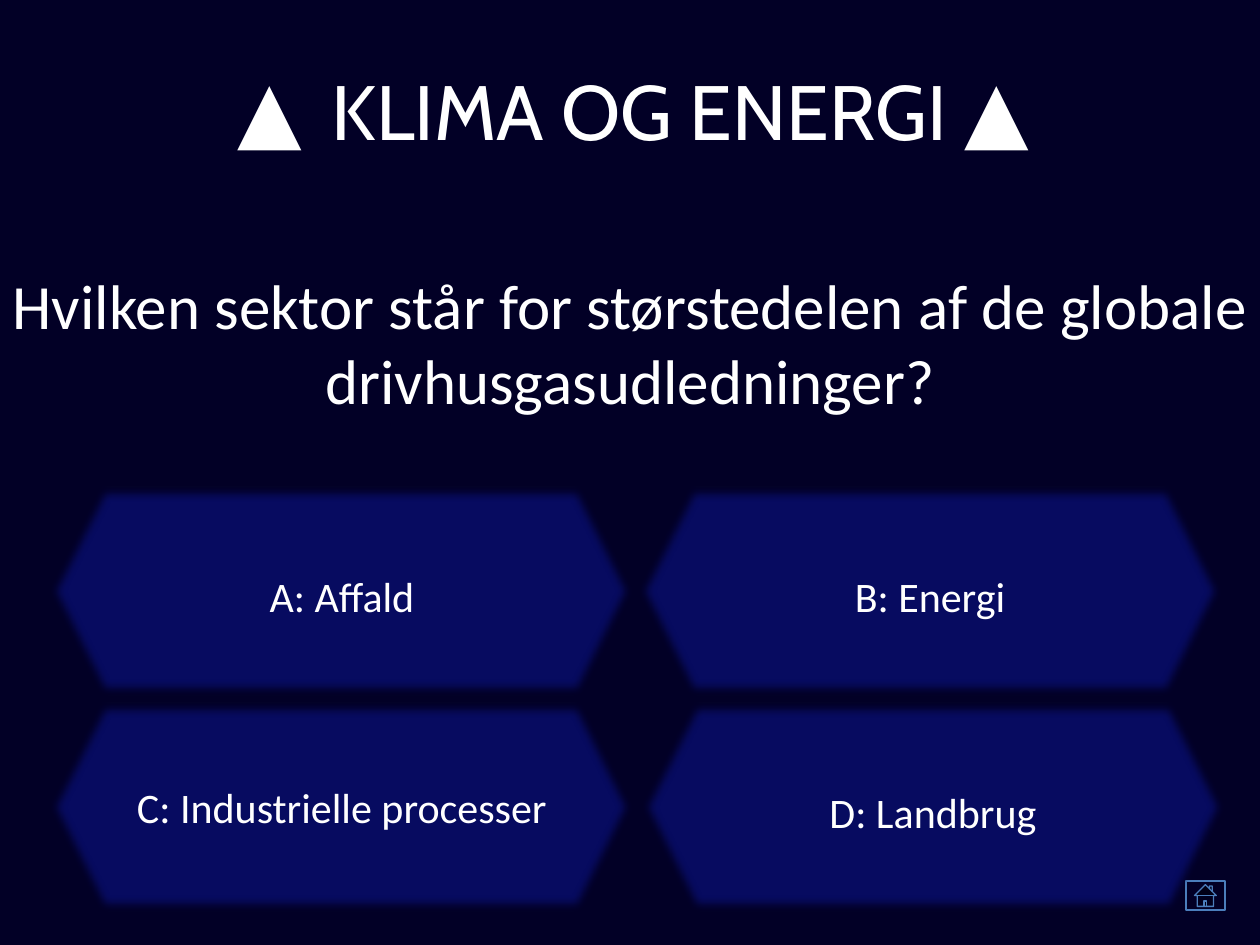
import lxml.etree
import pptx
import pptx.dml.color
import pptx.enum.shapes
import pptx.enum.text
import pptx.oxml.ns
import pptx.util

RGBColor = pptx.dml.color.RGBColor
Shapes = pptx.enum.shapes.MSO_SHAPE
Anchor = pptx.enum.text.MSO_ANCHOR

NIGHT = RGBColor(0x02, 0x00, 0x26)
ROYAL = RGBColor(0x07, 0x0B, 0x60)
STEEL = RGBColor(0x4B, 0x7E, 0xBC)
WHITE = RGBColor(0xFF, 0xFF, 0xFF)

EMU_PER_PX = 914400 / 126
SOFT_EDGE_PX = 9


def px(length):
    return pptx.util.Emu(round(length * EMU_PER_PX))


class QuizSlide:
    def __init__(self, presentation, background):
        self.slide = presentation.slides.add_slide(presentation.slide_layouts[6])
        self.slide.background.fill.solid()
        self.slide.background.fill.fore_color.rgb = background

    def outlined(self, kind, box, color):
        shape = self.slide.shapes.add_shape(kind, *map(px, box))
        shape.shadow.inherit = False
        shape.fill.solid()
        shape.fill.fore_color.rgb = color
        shape.line.color.rgb = STEEL
        shape.line.width = pptx.util.Pt(0.75)
        return shape

    def home_button(self, box):
        self.outlined(Shapes.ACTION_BUTTON_HOME, box, NIGHT)

    def answer_tile(self, box):
        tile = self.outlined(Shapes.HEXAGON, box, ROYAL)
        qn = pptx.oxml.ns.qn
        effects = tile._element.spPr.find(qn("a:effectLst"))
        lxml.etree.SubElement(effects, qn("a:softEdge"), rad=str(px(SOFT_EDGE_PX)))

    def text(self, box, runs, anchor=Anchor.MIDDLE):
        frame = self.slide.shapes.add_textbox(*map(px, box)).text_frame
        frame.word_wrap = True
        frame.auto_size = pptx.enum.text.MSO_AUTO_SIZE.SHAPE_TO_FIT_TEXT
        frame.vertical_anchor = anchor
        paragraph = frame.paragraphs[0]
        paragraph.alignment = pptx.enum.text.PP_ALIGN.CENTER
        for words, font, size, bold in runs:
            run = paragraph.add_run()
            run.text = words
            run.font.name = font
            run.font.size = pptx.util.Pt(size)
            run.font.bold = bold
            run.font.color.rgb = WHITE


def main():
    presentation = pptx.Presentation()
    presentation.slide_width = px(1260)
    presentation.slide_height = px(945)
    quiz = QuizSlide(presentation, NIGHT)

    quiz.home_button((1186, 881, 39, 29))
    quiz.text((42, 49, 1183, 115), [
        ("▲ ", "Comic Neue", 48, True),
        ("KLIMA OG ENERGI ", "Cabin", 44, False),
        ("▲", "Comic Neue", 48, True),
    ])
    question = "Hvilken sektor står for størstedelen af de globale drivhusgasudledninger?"
    quiz.text((0, 260, 1260, 165), [(question, "Calibri", 36, False)], Anchor.TOP)

    answers = [
        ("A: Affald", (45, 486), (76, 564, 532)),
        ("B: Energi", (634, 486), (674, 564, 512)),
        ("C: Industrielle processer", (45, 702), (76, 775, 532)),
        ("D: Landbrug", (637, 702), (677, 780, 512)),
    ]
    for answer, tile_corner, (left, top, width) in answers:
        quiz.answer_tile((*tile_corner, 591, 209))
        quiz.text((left, top, width, 63), [(answer, "Calibri", 24, False)])

    presentation.save("out.pptx")


if __name__ == "__main__":
    main()
